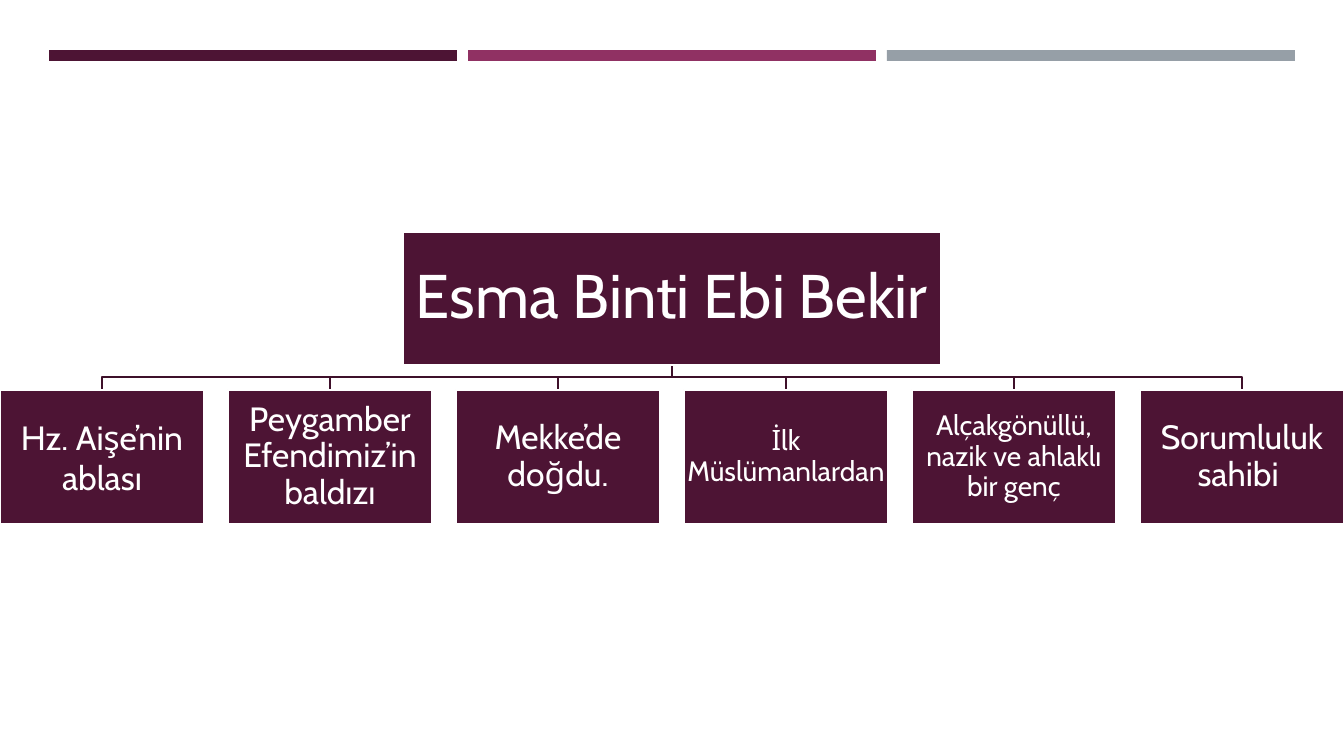
import pptx
import pptx.util
import pptx.dml.color
import pptx.enum.shapes
import pptx.enum.text

EMU_PER_PX = 914400 / 100.8
COLORS = {
    "plum": "4D1434",
    "magenta": "903163",
    "gray": "969FA7",
    "branch": "3E102A",
    "white": "FFFFFF",
}


def px(length):
    return pptx.util.Emu(round(length * EMU_PER_PX))


def add_box(left, top, width, height, color):
    box = slide.shapes.add_shape(
        pptx.enum.shapes.MSO_SHAPE.RECTANGLE, px(left), px(top), px(width), px(height))
    box.shadow.inherit = False
    box.fill.solid()
    box.fill.fore_color.rgb = pptx.dml.color.RGBColor.from_string(COLORS[color])
    box.line.fill.background()
    return box


deck = pptx.Presentation()
deck.slide_width, deck.slide_height = px(1344), px(756)
slide = deck.slides.add_slide(deck.slide_layouts[6])

# Bars along the top
for column, color in enumerate(["plum", "magenta", "gray"]):
    add_box(49 + column * 419, 50, 408, 11, color)

# Facts under the root: text, size, line spacing, inset
facts = [
    ("Hz. Aişe’nin ablası", 24, 1.0, 2),
    ("Peygamber Efendimiz’in baldızı", 24, 0.9, 2),
    ("Mekke’de doğdu.", 24, 0.9, 2),
    ("İlk Müslümanlardan", 20, 0.9, 1),
    ("Alçakgönüllü, nazik ve ahlaklı bir genç", 20, 0.9, 1),
    ("Sorumluluk sahibi ", 24, 0.9, 2),
]
fact_width, fact_step, fact_top = 204, 228, 390
root_center, root_bottom, branch_y = 672, 365, 377

# Branches from the root to each fact
for column in range(len(facts)):
    fact_center = column * fact_step + fact_width // 2
    outline = slide.shapes.build_freeform(root_center, root_bottom, scale=EMU_PER_PX)
    outline.add_line_segments(
        [(root_center, branch_y), (fact_center, branch_y), (fact_center, fact_top)],
        close=False)
    branch = outline.convert_to_shape()
    branch.shadow.inherit = False
    branch.fill.background()
    branch.line.color.rgb = pptx.dml.color.RGBColor.from_string(COLORS["branch"])
    branch.line.width = pptx.util.Pt(1.75)

# Root box and fact boxes
nodes = [(403, 232, 538, 133, "Esma Binti Ebi Bekir", 44, 0.9, 3)]
for column, fact in enumerate(facts):
    nodes.append((column * fact_step, fact_top, fact_width, 134, *fact))

for left, top, width, height, words, size, spacing, inset in nodes:
    node = add_box(left, top, width, height, "plum")
    node.line.color.rgb = pptx.dml.color.RGBColor.from_string(COLORS["white"])
    node.line.width = pptx.util.Pt(1.75)

    frame_format = {
        "word_wrap": True,
        "vertical_anchor": pptx.enum.text.MSO_ANCHOR.MIDDLE,
        "margin_left": px(inset),
        "margin_right": px(inset),
        "margin_top": px(inset),
        "margin_bottom": px(inset),
    }
    for name, value in frame_format.items():
        setattr(node.text_frame, name, value)

    label = node.text_frame.paragraphs[0]
    label.alignment = pptx.enum.text.PP_ALIGN.CENTER
    label.line_spacing = spacing
    wording = label.add_run()
    wording.text = words
    for name, value in {"name": "Cabin", "size": pptx.util.Pt(size)}.items():
        setattr(wording.font, name, value)
    wording.font.color.rgb = pptx.dml.color.RGBColor.from_string(COLORS["white"])

deck.save("out.pptx")
